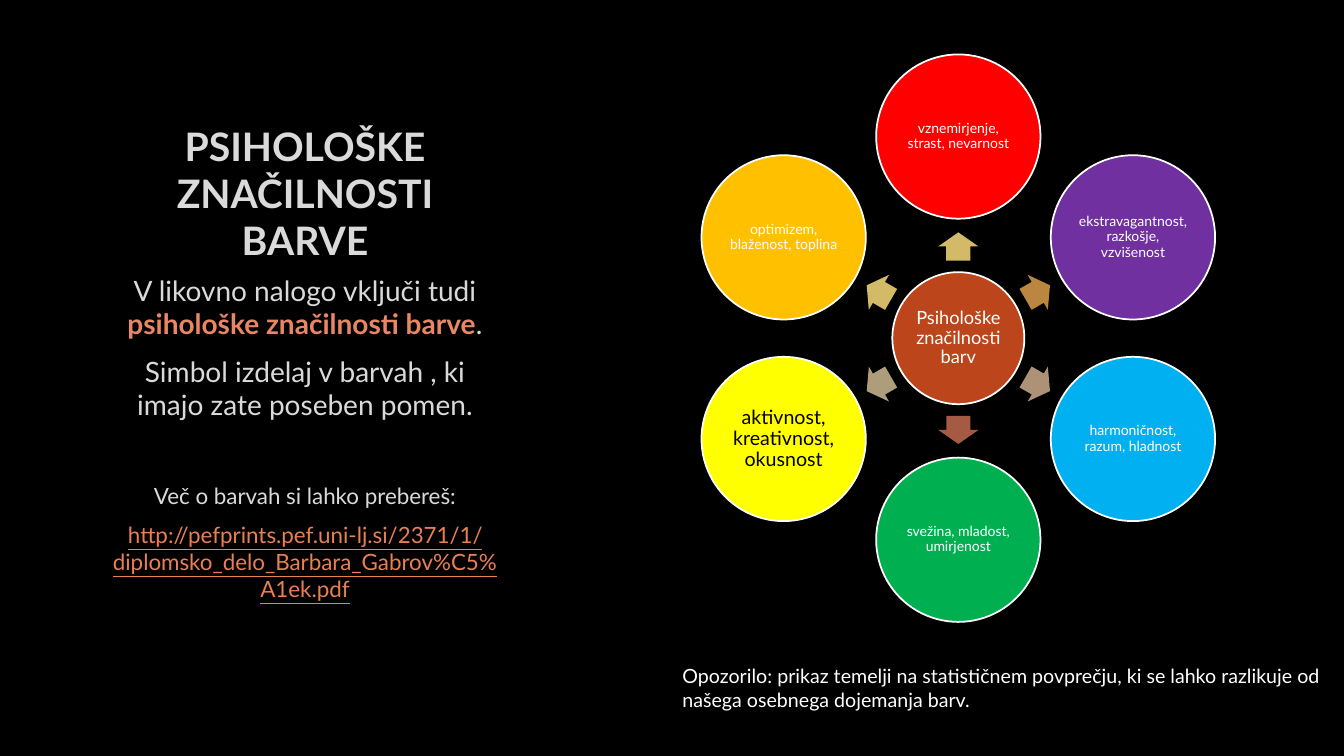
import math

from pptx import Presentation
from pptx.dml.color import RGBColor
from pptx.enum.shapes import MSO_SHAPE
from pptx.enum.text import MSO_ANCHOR, MSO_AUTO_SIZE, PP_ALIGN
from pptx.util import Inches, Pt

# Content
FONT = "Lato"
COLORS = {
    "background": "000000", "white": "FFFFFF", "black": "000000",
    "body": "DADADA", "emphasis": "E98764", "link": "E98052", "hub": "BC451B",
}
TITLE = "PSIHOLOŠKE ZNAČILNOSTI BARVE"
# Paragraphs: size, space before, runs of (text, colour, style)
TASK = [
    (20, 4, [("V likovno nalogo vključi tudi ", "body", ""),
             ("psihološke značilnosti barve", "emphasis", "bold"),
             (".", "body", "")]),
    (20, 4, [("Simbol izdelaj v barvah , ki imajo zate poseben pomen.", "body", "")]),
    (16, 37, [("Več o barvah si lahko prebereš:", "body", "")]),
    (16, 3.2, [("http://pefprints.pef.uni-lj.si/2371/1/"
                "diplomsko_delo_Barbara_Gabrov%C5%A1ek.pdf", "link", "underline")]),
]
WARNING = ("Opozorilo: prikaz temelji na statističnem povprečju, "
           "ki se lahko razlikuje od našega osebnega dojemanja barv.")
HUB = "Psihološke značilnosti barv"
# Clockwise from the top: meaning, circle fill, arrow fill, text size, text colour
MEANINGS = [
    ("vznemirjenje, strast, nevarnost", "FF0000", "D3BA68", 10, "white"),
    ("ekstravagantnost, razkošje, vzvišenost", "7030A0", "BB8640", 10, "white"),
    ("harmoničnost, razum, hladnost", "00B0F0", "AD9277", 10, "white"),
    ("svežina, mladost, umirjenost", "00B050", "A55A43", 10, "white"),
    ("aktivnost, kreativnost, okusnost", "FFFF00", "AD9D7B", 14, "black"),
    ("optimizem, blaženost, toplina", "FFC000", "D3BA68", 10, "white"),
]

# Wheel geometry in inches
CENTER_X, CENTER_Y = 9.505, 3.355
RING_RADIUS, ARROW_RADIUS = 2.0, 0.91
HUB_SIZE, CIRCLE_SIZE = 1.31, 1.63
ARROW_LENGTH, ARROW_WIDTH = 0.28, 0.4


def rgb(name):
    return RGBColor.from_string(COLORS.get(name, name))


def set_font(font, size, color):
    font.name = FONT
    font.size = Pt(size)
    font.color.rgb = rgb(color)


def add_centered(kind, x, y, width, height, fill):
    shape = slide.shapes.add_shape(kind, Inches(x - width / 2), Inches(y - height / 2),
                                   Inches(width), Inches(height))
    shape.shadow.inherit = False
    shape.fill.solid()
    shape.fill.fore_color.rgb = rgb(fill)
    return shape


def add_circle(words, x, y, diameter, fill, size, color):
    circle = add_centered(MSO_SHAPE.OVAL, x, y, diameter, diameter, fill)
    circle.line.color.rgb = rgb("white")
    circle.line.width = Pt(1.25)
    frame = circle.text_frame
    frame.word_wrap = True
    frame.vertical_anchor = MSO_ANCHOR.MIDDLE
    frame.margin_left = frame.margin_right = Inches(0.01)
    frame.margin_top = frame.margin_bottom = Inches(0.01)
    frame.text = words
    paragraph = frame.paragraphs[0]
    paragraph.alignment = PP_ALIGN.CENTER
    paragraph.line_spacing = 0.9
    set_font(paragraph.font, size, color)


def add_text_frame(left, top, width, height):
    box = slide.shapes.add_textbox(Inches(left), Inches(top), Inches(width), Inches(height))
    box.text_frame.word_wrap = True
    return box.text_frame


prs = Presentation()
prs.slide_width, prs.slide_height = Inches(13.33), Inches(7.5)
slide = prs.slides.add_slide(prs.slide_layouts[5])
slide.background.fill.solid()
slide.background.fill.fore_color.rgb = rgb("background")

# Title
title = slide.shapes.title
title.left, title.top = Inches(1), Inches(0.67)
title.width, title.height = Inches(4.05), Inches(1.99)
title.text_frame.text = TITLE
title.text_frame.word_wrap = True
title.text_frame.auto_size = MSO_AUTO_SIZE.NONE
title.text_frame.vertical_anchor = MSO_ANCHOR.BOTTOM
heading = title.text_frame.paragraphs[0]
heading.alignment = PP_ALIGN.CENTER
heading.font.bold = True
set_font(heading.font, 28, "body")

# Task description
task = add_text_frame(1, 2.66, 4.05, 3.67)
for index, (size, space_before, runs) in enumerate(TASK):
    paragraph = task.add_paragraph() if index else task.paragraphs[0]
    paragraph.alignment = PP_ALIGN.CENTER
    paragraph.space_before, paragraph.space_after = Pt(space_before), Pt(6)
    for words, color, style in runs:
        run = paragraph.add_run()
        run.text = words
        set_font(run.font, size, color)
        run.font.bold = style == "bold"
        run.font.underline = style == "underline"

# Colour wheel: hub, then an arrow and a circle every 60 degrees
add_circle(HUB, CENTER_X, CENTER_Y, HUB_SIZE, "hub", 13, "white")
for index, (meaning, fill, arrow_fill, size, color) in enumerate(MEANINGS):
    degrees = index * 360 / len(MEANINGS) - 90
    dx, dy = math.cos(math.radians(degrees)), math.sin(math.radians(degrees))
    arrow = add_centered(MSO_SHAPE.RIGHT_ARROW, CENTER_X + ARROW_RADIUS * dx,
                         CENTER_Y + ARROW_RADIUS * dy, ARROW_LENGTH, ARROW_WIDTH, arrow_fill)
    arrow.adjustments[0], arrow.adjustments[1] = 0.6, 0.5
    arrow.rotation = degrees % 360
    arrow.line.fill.background()
    add_circle(meaning, CENTER_X + RING_RADIUS * dx, CENTER_Y + RING_RADIUS * dy,
               CIRCLE_SIZE, fill, size, color)

# Warning
warning = add_text_frame(6.67, 6.54, 6.66, 0.57)
warning.text = WARNING
set_font(warning.paragraphs[0].font, 14, "white")

prs.save("out.pptx")
